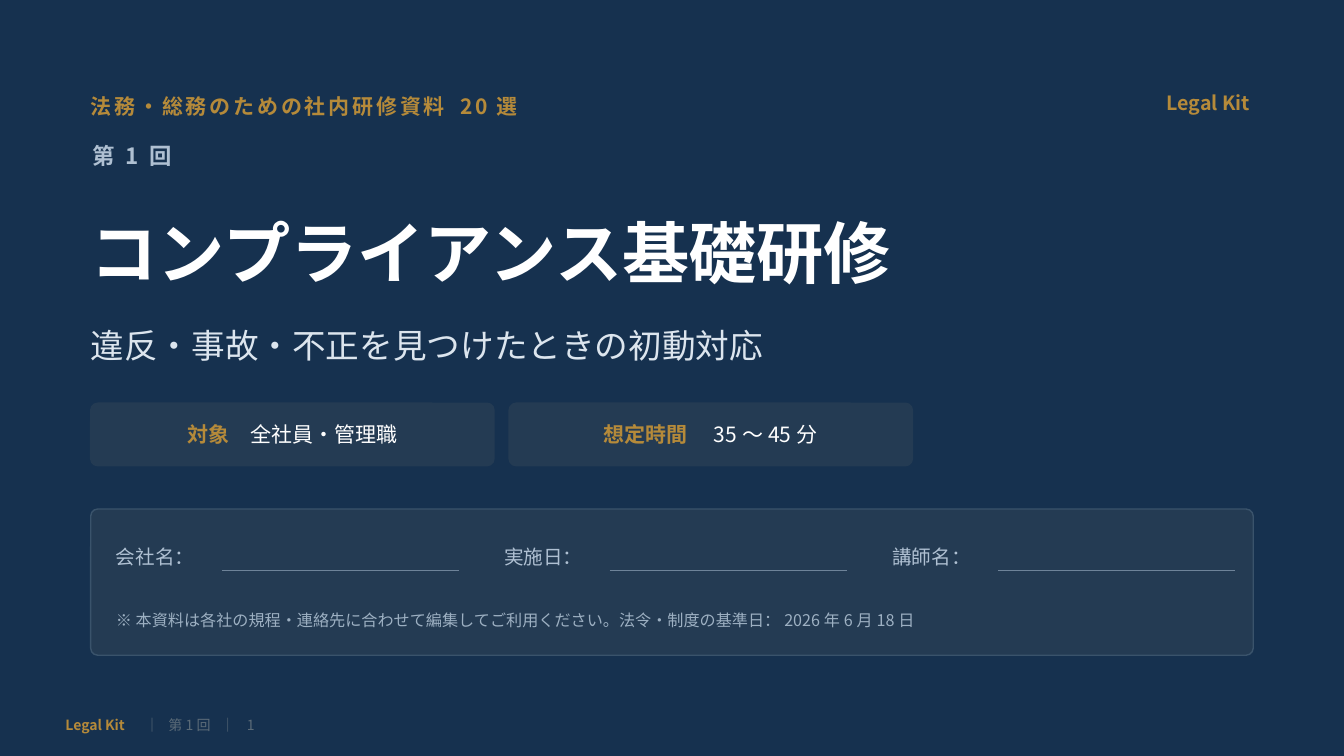
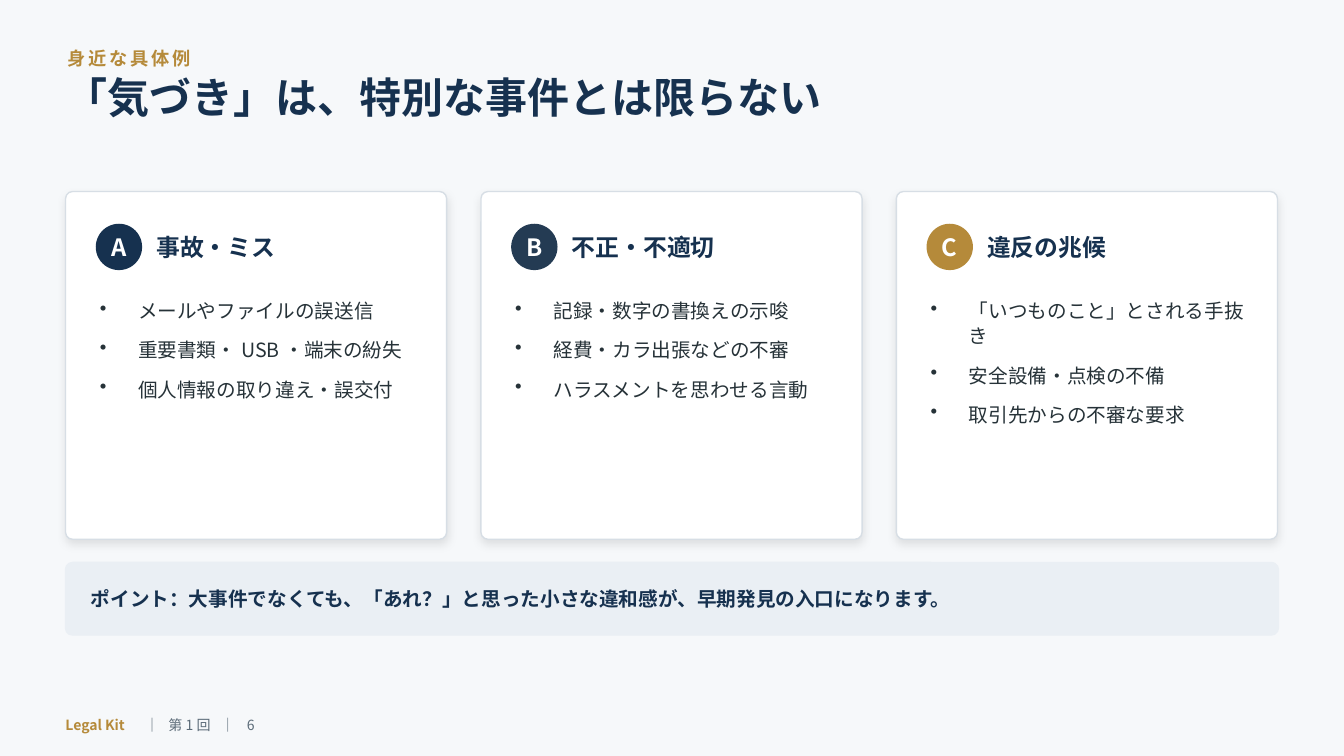
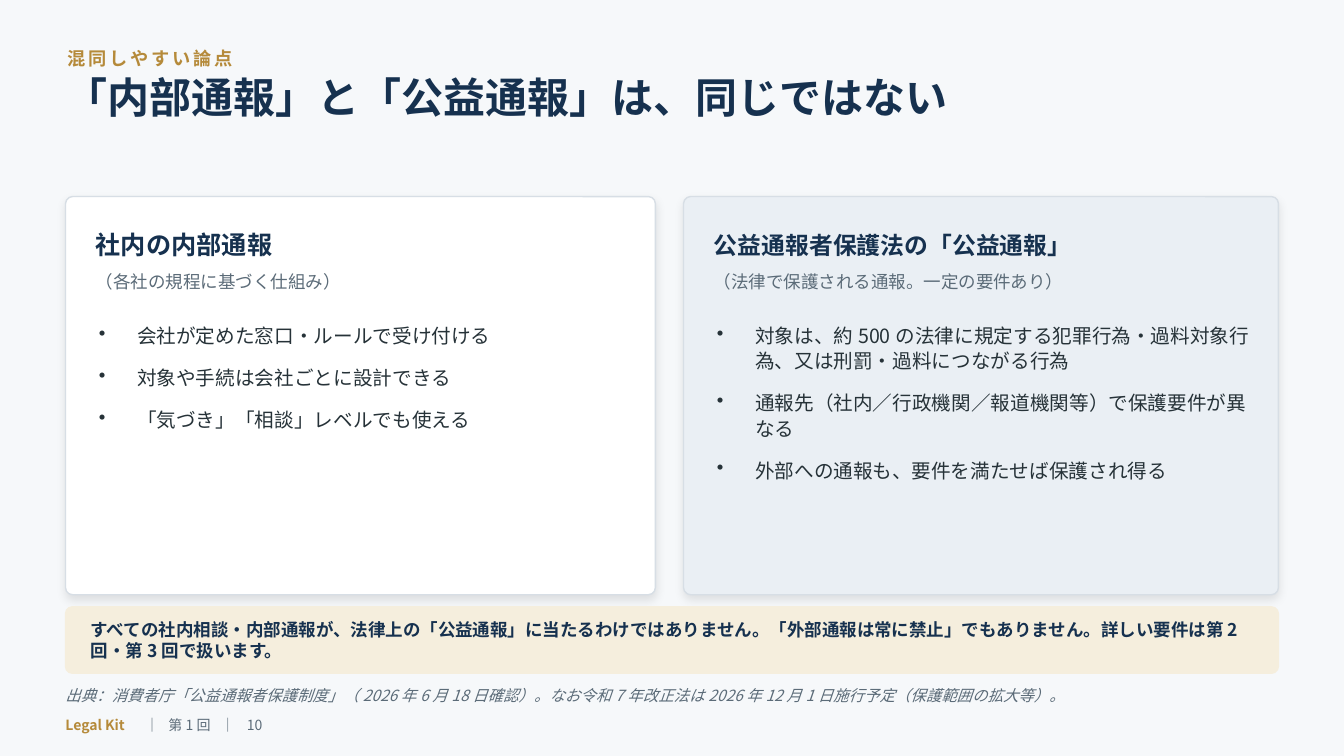
from lxml import etree
from pptx import Presentation
from pptx.dml.color import RGBColor
from pptx.enum.shapes import MSO_CONNECTOR, MSO_SHAPE
from pptx.enum.text import MSO_ANCHOR, PP_ALIGN
from pptx.oxml.ns import qn
from pptx.util import Emu, Pt

LEFT, CENTER, RIGHT = PP_ALIGN.LEFT, PP_ALIGN.CENTER, PP_ALIGN.RIGHT
TOP, MIDDLE = MSO_ANCHOR.TOP, MSO_ANCHOR.MIDDLE
ROUNDED, OVAL = MSO_SHAPE.ROUNDED_RECTANGLE, MSO_SHAPE.OVAL
STRAIGHT = MSO_CONNECTOR.STRAIGHT

EMU_PER_PX = 9144  # 100 px to the inch
FONT = "Noto Sans CJK JP"
BRAND = "Legal Kit"
SESSION = "第1回"
MARGIN, CONTENT_WIDTH = 65, 1203
CORNER = 7
BULLET_INDENT = 38
FOOTER_TABS = (79, 102, 154, 180)

COLORS = {
    "navy": "16314F", "slate": "243B53", "gold": "B58A3A", "white": "FFFFFF",
    "paper": "F6F8FA", "mist": "EAEFF4", "cream": "F5EEDD", "border": "D7DEE5",
    "body": "263238", "muted": "5B6B78", "session": "AFC0D2",
    "subtitle": "DCE5EE", "panel_edge": "3A536B", "rule": "6E8399",
    "caution": "9DB0C2", "black": "000000",
}


def px(length):
    return Emu(round(length * EMU_PER_PX))


def rgb(name):
    return RGBColor.from_string(COLORS[name])


def add_xml(parent, tag, **attributes):
    values = {key: str(value) for key, value in attributes.items()}
    return etree.SubElement(parent, qn(tag), values)


class Deck:
    """Shared style, plus the slide now being filled."""

    def __init__(self):
        self.prs = Presentation()
        self.prs.slide_width, self.prs.slide_height = px(1333), px(750)
        self.slide = None

    def start_slide(self, number, background):
        self.slide = self.prs.slides.add_slide(self.prs.slide_layouts[6])
        fill = self.slide.background.fill
        fill.solid()
        fill.fore_color.rgb = rgb(background)
        parts = [(BRAND, {"color": "gold", "bold": True}),
                 f"\t｜\t{SESSION}\t｜\t{number}"]
        self.text((MARGIN, 704, CONTENT_WIDTH, 30), [parts], size=10,
                  color="muted", tabs=FOOTER_TABS)

    def heading(self, kicker, title):
        self.text((67, 42, 1150, 32), [kicker], size=13, color="gold",
                  bold=True, spacing=2)
        self.text((MARGIN, 74, 1200, 95), [title], size=30, color="navy",
                  bold=True, line=34, anchor=TOP)

    def text(self, box, paragraphs, host=None, insets=(0, 0), anchor=MIDDLE,
             align=LEFT, line=None, after=None, bullet=False, tabs=(), **run_format):
        """Write paragraphs in a new text box, or in the host shape.

        A paragraph is a string or a list of strings and (string, format) pairs.
        """
        holder = host or self.slide.shapes.add_textbox(*map(px, box))
        frame = holder.text_frame
        frame.word_wrap = True
        frame.vertical_anchor = anchor
        frame.margin_left, frame.margin_right = map(px, insets)
        frame.margin_top = frame.margin_bottom = 0
        for index, parts in enumerate(paragraphs):
            paragraph = frame.add_paragraph() if index else frame.paragraphs[0]
            paragraph.alignment = align
            if line:
                paragraph.line_spacing = Pt(line)
            if after:
                paragraph.space_after = Pt(after)
            properties = paragraph._p.get_or_add_pPr()
            if bullet:
                properties.set("marL", str(px(BULLET_INDENT)))
                properties.set("indent", str(-px(BULLET_INDENT)))
                add_xml(properties, "a:buChar", char="•")
            if tabs:
                stops = add_xml(properties, "a:tabLst")
                for stop in tabs:
                    add_xml(stops, "a:tab", pos=px(stop), algn="l")
            for part in [parts] if isinstance(parts, str) else parts:
                words, changes = (part, {}) if isinstance(part, str) else part
                self.run(paragraph, words, **{**run_format, **changes})

    def run(self, paragraph, words, size, color, bold=False, italic=False, spacing=0):
        run = paragraph.add_run()
        run.text = words
        font = run.font
        font.name, font.size = FONT, Pt(size)
        font.bold, font.italic = bold, italic
        font.color.rgb = rgb(color)
        properties = run._r.get_or_add_rPr()
        add_xml(properties, "a:ea", typeface=FONT)
        if spacing:
            properties.set("spc", str(spacing * 100))

    def shape(self, kind, box, fill, edge=None):
        shape = self.slide.shapes.add_shape(kind, *map(px, box))
        shape.shadow.inherit = False
        shape.fill.solid()
        shape.fill.fore_color.rgb = rgb(fill)
        if edge:
            shape.line.color.rgb = rgb(edge)
            shape.line.width = Pt(1)
        else:
            shape.line.fill.background()
        return shape

    def panel(self, box, fill, edge=None):
        panel = self.shape(ROUNDED, box, fill, edge or fill)
        panel.adjustments[0] = CORNER / min(box[2:])
        return panel

    def card(self, box, fill="white"):
        """Panel with a soft shadow below it."""
        effects = self.panel(box, fill, "border")._element.spPr.find(qn("a:effectLst"))
        shadow = add_xml(effects, "a:outerShdw", blurRad=Pt(7), dist=Pt(3),
                         dir=90 * 60000, algn="bl", rotWithShape=0)
        shade = add_xml(shadow, "a:srgbClr", val=COLORS["black"])
        add_xml(shade, "a:alpha", val=10000)

    def bullets(self, box, items, after):
        self.text(box, items, size=14, color="body", line=18, after=after,
                  bullet=True, anchor=TOP)

    def band(self, top, height, message, fill, size, line=None):
        box = (MARGIN, top, CONTENT_WIDTH, height)
        self.text(box, [message], host=self.panel(box, fill), insets=(23, 26),
                  size=size, color="navy", bold=True, line=line)

    def rule(self, left, top, width):
        rule = self.slide.shapes.add_connector(
            STRAIGHT, *map(px, (left, top, left + width, top)))
        rule.line.color.rgb = rgb("rule")
        rule.line.width = Pt(1)
        add_xml(rule._element.spPr, "a:effectLst")


def cover(deck):
    deck.start_slide(1, "navy")
    left = 90
    deck.text((left, 85, 1150, 40), ["法務・総務のための社内研修資料 20選"],
              size=15, color="gold", bold=True, spacing=2)
    deck.text((940, 82, 300, 40), [BRAND], size=14, color="gold", bold=True,
              align=RIGHT)
    deck.text((92, 134, 400, 40), ["第 1 回"], size=16, color="session", bold=True)
    deck.text((left, 195, 1150, 110), ["コンプライアンス基礎研修"],
              size=48, color="white", bold=True)
    deck.text((left, 312, 1150, 60), ["違反・事故・不正を見つけたときの初動対応"],
              size=24, color="subtitle")

    facts = [("対象", "全社員・管理職"), ("想定時間", "35〜45分")]
    for index, (label, value) in enumerate(facts):
        box = (left + index * 415, 400, 400, 62)
        parts = [(label + "　", {"color": "gold", "bold": True}), value]
        deck.text(box, [parts], host=deck.panel(box, "slate"), size=15,
                  color="white", align=CENTER)

    deck.panel((left, 505, 1153, 145), "slate", "panel_edge")
    for index, label in enumerate(["会社名：", "実施日：", "講師名："]):
        field_left = 115 + index * 385
        deck.text((field_left, 532, 120, 40), [label], size=14, color="session")
        deck.rule(field_left + 105, 566, 235)
    deck.text((115, 595, 1050, 40),
              ["※ 本資料は各社の規程・連絡先に合わせて編集してご利用ください。"
               "法令・制度の基準日：2026年6月18日"],
              size=11.5, color="caution")


def everyday_examples(deck):
    deck.start_slide(6, "paper")
    deck.heading("身近な具体例", "「気づき」は、特別な事件とは限らない")
    categories = [
        ("A", "navy", "事故・ミス",
         ["メールやファイルの誤送信", "重要書類・USB・端末の紛失",
          "個人情報の取り違え・誤交付"]),
        ("B", "slate", "不正・不適切",
         ["記録・数字の書換えの示唆", "経費・カラ出張などの不審",
          "ハラスメントを思わせる言動"]),
        ("C", "gold", "違反の兆候",
         ["「いつものこと」とされる手抜き", "安全設備・点検の不備",
          "取引先からの不審な要求"]),
    ]
    for index, (letter, color, name, examples) in enumerate(categories):
        left = MARGIN + index * 412
        deck.card((left, 190, 378, 345))
        badge_box = (left + 30, 222, 46, 46)
        deck.text(badge_box, [letter], host=deck.shape(OVAL, badge_box, color),
                  size=17, color="white", bold=True, align=CENTER)
        deck.text((left + 90, 222, 268, 46), [name], size=17, color="navy", bold=True)
        deck.bullets((left + 34, 295, 316, 220), examples, after=10)
    deck.band(558, 72, "ポイント：大事件でなくても、「あれ？」と思った小さな違和感が、"
              "早期発見の入口になります。", "mist", size=14)


def reporting_comparison(deck):
    deck.start_slide(10, "paper")
    deck.heading("混同しやすい論点", "「内部通報」と「公益通報」は、同じではない")
    systems = [
        (MARGIN, 585, "white", 18, "社内の内部通報", "（各社の規程に基づく仕組み）",
         ["会社が定めた窓口・ルールで受け付ける", "対象や手続は会社ごとに設計できる",
          "「気づき」「相談」レベルでも使える"]),
        (678, 590, "mist", 17, "公益通報者保護法の「公益通報」",
         "（法律で保護される通報。一定の要件あり）",
         ["対象は、約500の法律に規定する犯罪行為・過料対象行為、"
          "又は刑罰・過料につながる行為",
          "通報先（社内／行政機関／報道機関等）で保護要件が異なる",
          "外部への通報も、要件を満たせば保護され得る"]),
    ]
    for left, width, fill, size, name, basis, features in systems:
        deck.card((left, 195, width, 395), fill)
        deck.text((left + 30, 218, width - 60, 50), [name], size=size,
                  color="navy", bold=True)
        deck.text((left + 30, 262, width - 60, 35), [basis], size=12.5, color="muted")
        deck.bullets((left + 33, 320, width - 55, 250), features, after=12)
    deck.band(602, 66, "すべての社内相談・内部通報が、法律上の「公益通報」に当たるわけではありません。"
              "「外部通報は常に禁止」でもありません。詳しい要件は第2回・第3回で扱います。",
              "cream", size=12.5, line=15)
    deck.text((MARGIN, 675, 1200, 30),
              ["出典：消費者庁「公益通報者保護制度」（2026年6月18日確認）。"
               "なお令和7年改正法は2026年12月1日施行予定（保護範囲の拡大等）。"],
              size=11, color="muted", italic=True)


def main():
    deck = Deck()
    cover(deck)
    everyday_examples(deck)
    reporting_comparison(deck)
    deck.prs.save("out.pptx")


if __name__ == "__main__":
    main()
